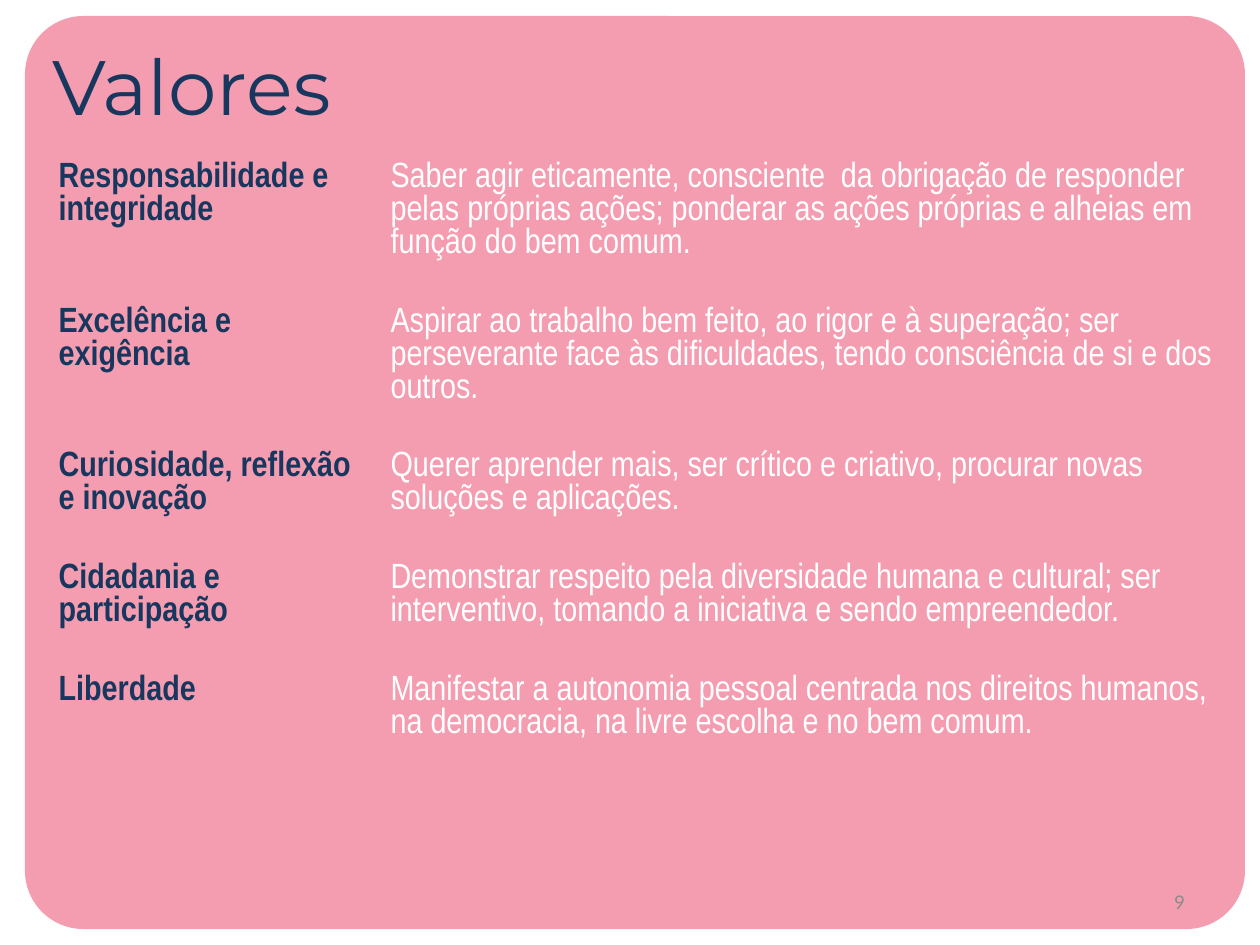
"""Build the slide "Valores": a table of values and their descriptions on a rounded panel."""
from lxml import etree
from pptx import Presentation
from pptx.dml.color import RGBColor
from pptx.enum.shapes import MSO_SHAPE
from pptx.enum.text import MSO_ANCHOR, MSO_AUTO_SIZE, PP_ALIGN
from pptx.oxml.ns import qn
from pptx.util import Emu, Pt

ROUNDED = MSO_SHAPE.ROUNDED_RECTANGLE
TOP, MIDDLE = MSO_ANCHOR.TOP, MSO_ANCHOR.MIDDLE
LEFT, RIGHT = PP_ALIGN.LEFT, PP_ALIGN.RIGHT
NO_FIT = MSO_AUTO_SIZE.NONE

NAVY = RGBColor(0x17, 0x37, 0x5E)
PINK = RGBColor(0xF2, 0x7A, 0x94)
WHITE = RGBColor(0xFF, 0xFF, 0xFF)
GREY = RGBColor(0x8C, 0x8C, 0x8C)

TITLE = "Valores"
PAGE = "9"
VALUES = [
    ("Responsabilidade e integridade",
     "Saber agir eticamente, consciente  da obrigação de responder pelas próprias ações; "
     "ponderar as ações próprias e alheias em função do bem comum."),
    ("Excelência e exigência",
     "Aspirar ao trabalho bem feito, ao rigor e à superação; ser perseverante face às "
     "dificuldades, tendo consciência de si e dos outros."),
    ("Curiosidade, reflexão e inovação",
     "Querer aprender mais, ser crítico e criativo, procurar novas soluções e aplicações."),
    ("Cidadania e participação",
     "Demonstrar respeito pela diversidade humana e cultural; ser interventivo, tomando a "
     "iniciativa e sendo empreendedor."),
    ("Liberdade",
     "Manifestar a autonomia pessoal centrada nos direitos humanos, na democracia, na livre "
     "escolha e no bem comum."),
]
COLUMN_WIDTHS = [332, 849]
ROW_HEIGHTS = [145, 144, 112, 112, 222]

TITLE_FONT = {"name": "Montserrat", "size": Pt(44), "bold": False}
PAGE_FONT = {"name": "Calibri", "size": Pt(12), "bold": False}
CELL_FONTS = [
    ({"name": "Arial Narrow", "size": Pt(20), "bold": True}, NAVY),
    ({"name": "Arial Narrow", "size": Pt(20), "bold": False}, WHITE),
]
PLAIN_TABLE = "{2D5ABB26-0587-4C30-8999-92F81FD0307C}"


def px(length):
    return Emu(round(length * 914400 / 126))


def box(*lengths):
    return [px(length) for length in lengths]


def assign(target, values):
    for name, value in values.items():
        setattr(target, name, value)


def write(frame, text, font, color, align=LEFT):
    paragraph = frame.paragraphs[0]
    assign(paragraph, {"alignment": align, "line_spacing": 1.0})
    run = paragraph.add_run()
    run.text = text
    assign(run.font, font)
    run.font.color.rgb = color


def add_panel(slide):
    panel = slide.shapes.add_shape(ROUNDED, *box(25, 16, 1220, 913))
    panel.adjustments[0] = 0.064
    panel.shadow.inherit = False
    panel.fill.solid()
    panel.fill.fore_color.rgb = PINK
    panel.line.fill.background()
    color = panel.fill._xPr.find(".//" + qn("a:srgbClr"))
    etree.SubElement(color, qn("a:alpha")).set("val", "73000")
    slide.shapes._spTree.insert(2, panel._element)


def add_title(slide):
    title = slide.shapes.title
    assign(title, dict(zip(("left", "top", "width", "height"), box(40, 34, 1187, 105))))
    assign(title.text_frame, {
        "margin_left": px(13), "margin_right": 0, "margin_top": px(5), "margin_bottom": px(5),
        "vertical_anchor": TOP, "word_wrap": True, "auto_size": NO_FIT})
    write(title.text_frame, TITLE, TITLE_FONT, NAVY)


def add_values(slide):
    size = box(46, 156, sum(COLUMN_WIDTHS), sum(ROW_HEIGHTS))
    frame = slide.shapes.add_table(len(VALUES), len(COLUMN_WIDTHS), *size)
    table = frame.table
    assign(table, {"first_row": False, "horz_banding": False})
    table._tbl.tblPr.find(qn("a:tableStyleId")).text = PLAIN_TABLE
    for column, width in zip(table.columns, COLUMN_WIDTHS):
        column.width = px(width)
    for row, height, entry in zip(table.rows, ROW_HEIGHTS, VALUES):
        row.height = px(height)
        for cell, text, (font, color) in zip(row.cells, entry, CELL_FONTS):
            cell.fill.background()
            write(cell.text_frame, text, font, color)


def add_page_number(slide):
    frame = slide.shapes.add_textbox(*box(903, 876, 294, 50)).text_frame
    assign(frame, {"word_wrap": True, "vertical_anchor": MIDDLE})
    write(frame, PAGE, PAGE_FONT, GREY, RIGHT)


def main():
    deck = Presentation()
    assign(deck, {"slide_width": px(1260), "slide_height": px(945)})
    slide = deck.slides.add_slide(deck.slide_layouts[5])
    add_panel(slide)
    add_title(slide)
    add_values(slide)
    add_page_number(slide)
    deck.save("out.pptx")


if __name__ == "__main__":
    main()
